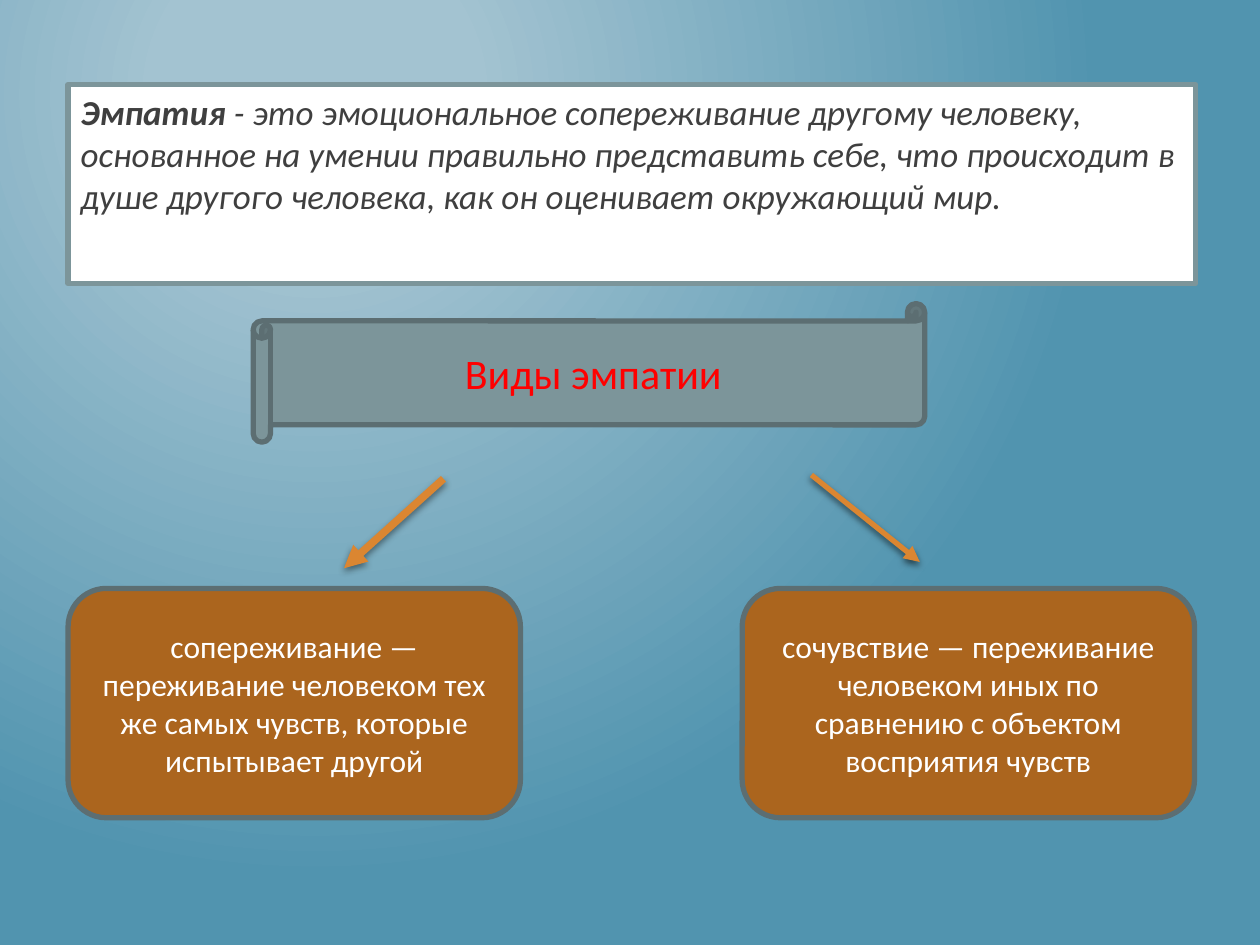
from pptx import Presentation
from pptx.dml.color import RGBColor
from pptx.enum.shapes import MSO_CONNECTOR, MSO_SHAPE
from pptx.enum.text import MSO_ANCHOR, MSO_AUTO_SIZE, PP_ALIGN
from pptx.oxml import parse_xml
from pptx.oxml.ns import nsdecls, qn
from pptx.util import Inches, Pt

WHITE = RGBColor(0xFF, 0xFF, 0xFF)
RED = RGBColor(0xFF, 0x00, 0x00)
CHARCOAL = RGBColor(0x3F, 0x3F, 0x3F)
GREY = RGBColor(0x7C, 0x95, 0x9A)
DARK_GREY = RGBColor(0x5C, 0x6E, 0x72)
BROWN = RGBColor(0xAB, 0x65, 0x1E)
ORANGE = RGBColor(0xDB, 0x86, 0x31)
PALE_BLUE = RGBColor(0xA3, 0xC3, 0xD1)
BLUE = RGBColor(0x51, 0x94, 0xAF)

COLUMNS, ROWS = 100, 75


class SlideBuilder:
    font = "Calibri"
    outline = 3

    def __init__(self, deck, layout):
        self.column = deck.slide_width / COLUMNS
        self.row = deck.slide_height / ROWS
        self.page = deck.slides.add_slide(layout)

    def place(self, left, top, width, height):
        return (round(left * self.column), round(top * self.row),
                round(width * self.column), round(height * self.row))

    def background(self, inner, outer):
        self.page.background.fill.gradient()
        gradient = self.page.element.find(".//" + qn("a:gradFill"))
        gradient.getparent().replace(gradient, parse_xml(
            f'<a:gradFill {nsdecls("a")} rotWithShape="1"><a:gsLst>'
            f'<a:gs pos="20000"><a:srgbClr val="{inner}"/></a:gs>'
            f'<a:gs pos="100000"><a:srgbClr val="{outer}"/></a:gs></a:gsLst>'
            '<a:path path="circle">'
            '<a:fillToRect l="50000" t="20000" r="100000" b="100000"/>'
            '</a:path></a:gradFill>'))

    def paint(self, shape, fill, line):
        shape.fill.solid()
        shape.fill.fore_color.rgb = fill
        shape.line.color.rgb = line
        shape.line.width = Pt(self.outline)

    def style(self, span, size, color):
        span.font.name = self.font
        span.font.size = Pt(size)
        span.font.color.rgb = color

    def definition(self, area, term, meaning):
        page = self.page
        title = page.shapes.title
        title.element.getparent().remove(title.element)
        box = page.placeholders[1]
        box.left, box.top, box.width, box.height = self.place(*area)
        self.paint(box, WHITE, GREY)
        box.text_frame.auto_size = MSO_AUTO_SIZE.NONE
        para = box.text_frame.paragraphs[0]
        for text, bold in ((term, True), (meaning, False)):
            span = para.add_run()
            span.text = text
            self.style(span, 20, CHARCOAL)
            span.font.bold = bold
            span.font.italic = True
        properties = para._p.get_or_add_pPr()
        properties.set("marL", "0")
        properties.set("indent", "0")
        properties.append(parse_xml(f'<a:buNone {nsdecls("a")}/>'))

    def panel(self, kind, area, text, size, fill, color):
        box = self.page.shapes.add_shape(kind, *self.place(*area))
        box.shadow.inherit = False
        self.paint(box, fill, DARK_GREY)
        frame = box.text_frame
        frame.word_wrap = True
        frame.vertical_anchor = MSO_ANCHOR.MIDDLE
        frame.text = text
        para = frame.paragraphs[0]
        para.alignment = PP_ALIGN.CENTER
        self.style(para.runs[0], size, color)

    def arrow(self, start, end, width, opacity):
        arrow = self.page.shapes.add_connector(
            MSO_CONNECTOR.STRAIGHT, *self.place(*start, *end))
        arrow.line.color.rgb = ORANGE
        arrow.line.width = Pt(width)
        arrow.line._get_or_add_ln().append(
            parse_xml(f'<a:tailEnd {nsdecls("a")} type="triangle"/>'))
        arrow.element.spPr.append(parse_xml(
            f'<a:effectLst {nsdecls("a")}>'
            f'<a:outerShdw blurRad="{Pt(4)}" dist="{Pt(2)}" dir="5400000" rotWithShape="0">'
            f'<a:srgbClr val="000000"><a:alpha val="{opacity * 1000}"/></a:srgbClr>'
            '</a:outerShdw></a:effectLst>'))


def main():
    deck = Presentation()
    deck.slide_width, deck.slide_height = Inches(10), Inches(7.5)
    slide = SlideBuilder(deck, deck.slide_layouts.get_by_name("Title and Content"))
    slide.background(PALE_BLUE, BLUE)
    slide.definition(
        (5.4, 6.7, 89.5, 15.8), "Эмпатия ",
        "- это эмоциональное сопереживание другому человеку, основанное на умении "
        "правильно представить себе, что происходит в душе другого человека, "
        "как он оценивает окружающий мир.")
    slide.panel(MSO_SHAPE.HORIZONTAL_SCROLL, (20.1, 24.1, 53.3, 11),
                "Виды эмпатии", 24, GREY, RED)
    slide.arrow((35.2, 38), (27.3, 45.1), 4.32, 44)
    slide.arrow((64.4, 37.7), (73, 44.6), 3, 55)
    kinds = (
        (5.4, "сопереживание — переживание человеком тех же самых чувств, "
              "которые испытывает другой"),
        (58.9, "сочувствие — переживание человеком иных по сравнению с объектом "
               "восприятия чувств"),
    )
    for left, text in kinds:
        slide.panel(MSO_SHAPE.ROUNDED_RECTANGLE, (left, 46.7, 35.9, 18.2),
                    text, 18, BROWN, WHITE)
    deck.save("out.pptx")


if __name__ == "__main__":
    main()
